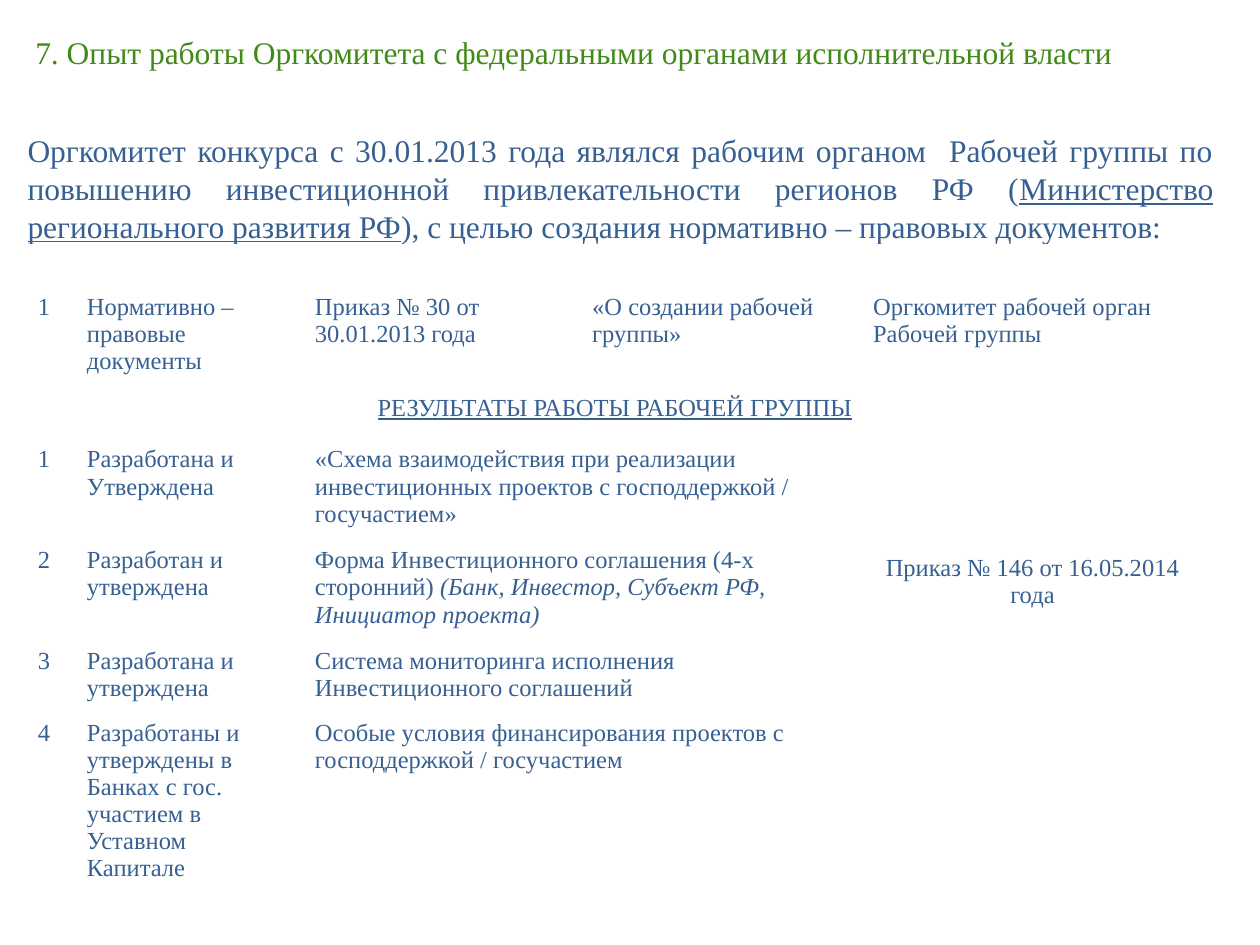
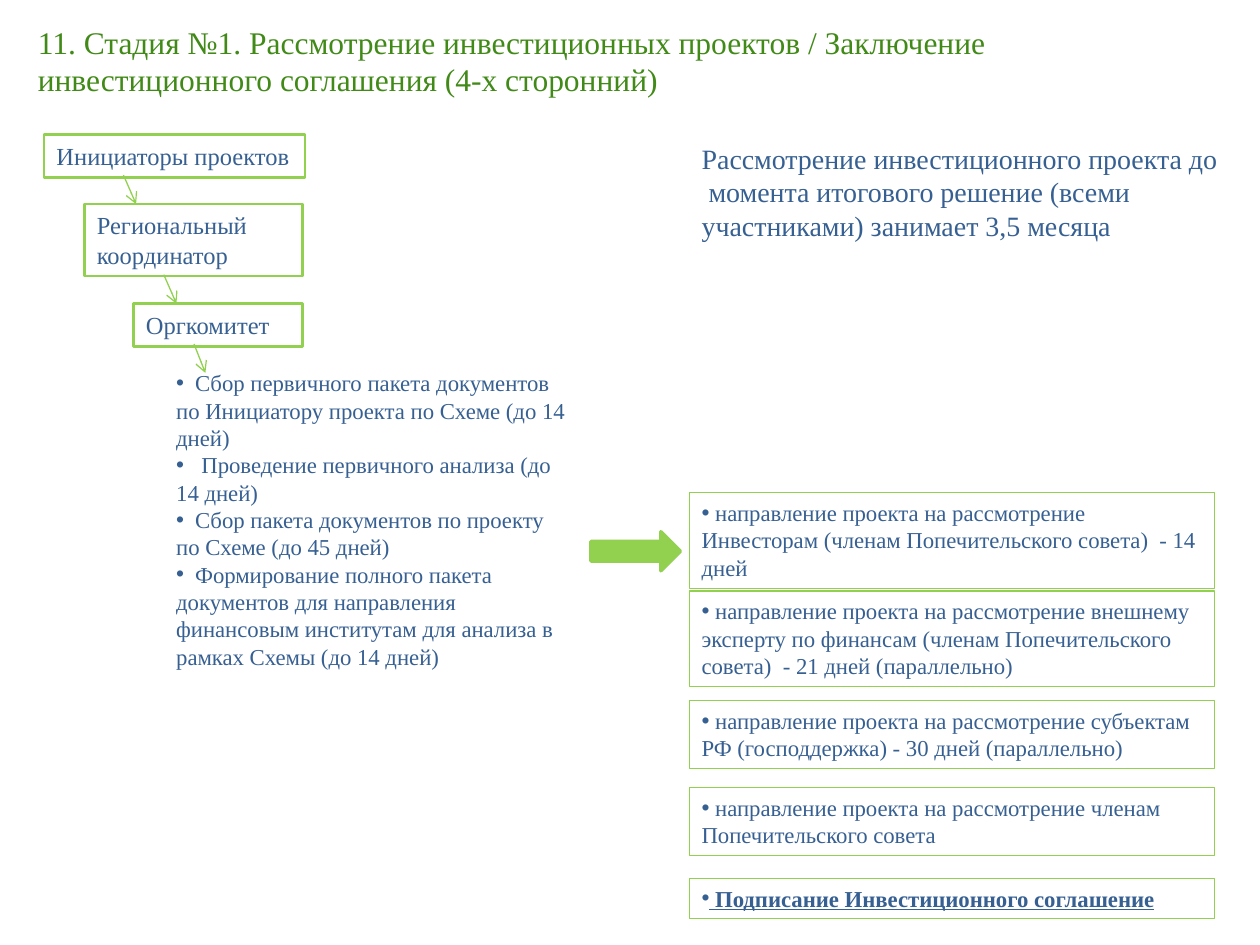
from dataclasses import dataclass

from lxml.etree import SubElement
from pptx import Presentation
from pptx.dml.color import RGBColor
from pptx.enum.shapes import MSO_CONNECTOR as Connector
from pptx.enum.shapes import MSO_SHAPE as Preset
from pptx.enum.text import MSO_ANCHOR as Anchor
from pptx.enum.text import MSO_AUTO_SIZE as AutoSize
from pptx.enum.text import PP_ALIGN as Align
from pptx.oxml.ns import qn
from pptx.util import Inches, Pt

FONT = "Times New Roman"
COLORS = {"title": "418A18", "text": "376092", "accent": "92D050"}
TITLE_ONLY = 5


@dataclass(frozen=True)
class Area:
    left: float
    top: float
    width: float
    height: float

    def inches(self) -> tuple:
        return tuple(map(Inches, (self.left, self.top, self.width, self.height)))


@dataclass(frozen=True)
class Run:
    text: str
    bold: bool = False
    italic: bool = False
    underline: bool = False


@dataclass(frozen=True)
class Paragraph:
    runs: tuple
    tab: float = 0  # gap between bullet and text, in inches


@dataclass(frozen=True)
class Box:
    area: Area
    paragraphs: tuple


@dataclass(frozen=True)
class Arrow:
    start: tuple
    end: tuple


def line(*texts, tab: float = 0) -> Paragraph:
    """A paragraph of plain strings and formatted runs."""
    return Paragraph(tuple(Run(t) if isinstance(t, str) else t for t in texts), tab)


def color(name: str) -> RGBColor:
    return RGBColor.from_string(COLORS[name])


# Shared drawing functions
def write(frame, paragraphs, *, size=14, ink="text", align=Align.LEFT, bullet=False) -> None:
    for index, content in enumerate(paragraphs):
        paragraph = frame.paragraphs[0] if index == 0 else frame.add_paragraph()
        paragraph.alignment = align
        properties = paragraph._p.get_or_add_pPr()
        if bullet:
            SubElement(properties, qn("a:buFont"), typeface="Arial")
            SubElement(properties, qn("a:buChar"), char="•")
        if content.tab:
            tabs = SubElement(properties, qn("a:tabLst"))
            SubElement(tabs, qn("a:tab"), pos=str(Inches(content.tab)), algn="l")
        for part in content.runs:
            run = paragraph.add_run()
            run.text = part.text
            font = run.font
            font.name, font.size, font.color.rgb = FONT, Pt(size), color(ink)
            font.bold, font.italic, font.underline = part.bold, part.italic, part.underline


def add_titled_slide(presentation, title: str, area: Area):
    slide = presentation.slides.add_slide(presentation.slide_layouts[TITLE_ONLY])
    shape = slide.shapes.title
    shape.left, shape.top, shape.width, shape.height = area.inches()
    frame = shape.text_frame
    frame.auto_size, frame.vertical_anchor = AutoSize.NONE, Anchor.TOP
    write(frame, [line(title)], size=18, ink="title")
    return slide


def add_text(slide, box: Box, **style) -> None:
    frame = slide.shapes.add_textbox(*box.area.inches()).text_frame
    frame.word_wrap = True
    write(frame, box.paragraphs, **style)


def add_outlined_shape(slide, preset, area: Area, line_width: float):
    shape = slide.shapes.add_shape(preset, *area.inches())
    shape.shadow.inherit = False
    shape.line.color.rgb, shape.line.width = color("accent"), Pt(line_width)
    return shape


def add_framed_text(slide, box: Box, line_width: float, **style) -> None:
    shape = add_outlined_shape(slide, Preset.RECTANGLE, box.area, line_width)
    shape.fill.background()
    shape.text_frame.word_wrap = True
    shape.text_frame.vertical_anchor = Anchor.TOP
    write(shape.text_frame, box.paragraphs, **style)


def add_arrow(slide, arrow: Arrow) -> None:
    connector = slide.shapes.add_connector(
        Connector.STRAIGHT, *map(Inches, arrow.start + arrow.end))
    connector.line.color.rgb, connector.line.width = color("accent"), Pt(0.75)
    SubElement(connector.line._get_or_add_ln(), qn("a:tailEnd"), type="arrow")
    SubElement(connector._element.spPr, qn("a:effectLst"))


# Slide with the documents table
INTRO = Box(Area(0.12, 0.99, 9.61, 1.01), (line(
    "Оргкомитет конкурса с 30.01.2013 года являлся рабочим органом  Рабочей группы "
    "по повышению инвестиционной привлекательности регионов РФ (",
    Run("Министерство регионального развития РФ", underline=True),
    "), с целью создания нормативно – правовых документов:"),))

COLUMN_WIDTHS = (0.39, 1.81, 2.2, 2.23, 2.73)
ROW_HEIGHTS = (0.34, 0.79, 0.41, 0.8, 0.8, 0.56, 1.51)
HEADING_ROW, FIRST_RESULT, LAST_MERGED_ROW = 2, 3, 5
DOCUMENT = ("1", "Нормативно – правовые документы", "Приказ № 30 от 30.01.2013 года",
            "«О создании рабочей группы»", "Оргкомитет рабочей орган Рабочей группы")
RESULTS = (
    ("1", "Разработана и Утверждена",
     "«Схема взаимодействия при реализации инвестиционных проектов с господдержкой / "
     "госучастием»"),
    ("2", "Разработан и утверждена", line(
        "Форма Инвестиционного соглашения (4-х сторонний) ",
        Run("(Банк, Инвестор, Субъект РФ, Инициатор проекта)", italic=True))),
    ("3", "Разработана и утверждена",
     "Система мониторинга исполнения Инвестиционного соглашений"),
    ("4", "Разработаны и утверждены в Банках с гос. участием в Уставном Капитале",
     "Особые условия финансирования проектов с господдержкой / госучастием"),
)


def add_documents_table(slide) -> None:
    area = Area(0.2, 1.94, sum(COLUMN_WIDTHS), sum(ROW_HEIGHTS))
    table = slide.shapes.add_table(
        len(ROW_HEIGHTS), len(COLUMN_WIDTHS), *area.inches()).table
    table.horz_banding = False
    for column, width in zip(table.columns, COLUMN_WIDTHS):
        column.width = Inches(width)
    for row, height in zip(table.rows, ROW_HEIGHTS):
        row.height = Inches(height)
    for cell in table.iter_cells():
        cell.fill.background()
    for cell in table.rows[0].cells:
        cell.margin_top = cell.margin_bottom = 0

    # Merged areas
    last = len(COLUMN_WIDTHS) - 1
    heading = table.cell(HEADING_ROW, 0)
    heading.merge(table.cell(HEADING_ROW, last))
    order = table.cell(FIRST_RESULT, last)
    order.merge(table.cell(LAST_MERGED_ROW, last))
    order.margin_top = Inches(0.91)
    for row in range(FIRST_RESULT, len(ROW_HEIGHTS)):
        table.cell(row, 2).merge(table.cell(row, 3))

    # Contents
    write(heading.text_frame,
          [line(Run("РЕЗУЛЬТАТЫ РАБОТЫ РАБОЧЕЙ ГРУППЫ", underline=True))],
          align=Align.CENTER)
    write(order.text_frame, [line("Приказ № 146 от 16.05.2014 года")], align=Align.CENTER)
    numbered = [(1, DOCUMENT), *enumerate(RESULTS, FIRST_RESULT)]
    for row, values in numbered:
        for column, value in enumerate(values):
            content = value if isinstance(value, Paragraph) else line(value)
            write(table.cell(row, column).text_frame, [content])


def build_documents_slide(presentation) -> None:
    slide = add_titled_slide(
        presentation,
        "7. Опыт работы Оргкомитета с федеральными органами исполнительной власти",
        Area(0.18, 0.21, 8.84, 0.41))
    add_text(slide, INTRO, size=18, align=Align.JUSTIFY)
    add_documents_table(slide)


# Slide with the review stage
PARTICIPANTS = (
    Box(Area(0.35, 1.07, 2.07, 0.34), (line("Инициаторы проектов"),)),
    Box(Area(0.67, 1.62, 1.73, 0.57), (line("Региональный"), line("координатор"))),
    Box(Area(1.06, 2.41, 1.34, 0.34), (line("Оргкомитет"),)),
)
ARROWS = (
    Arrow((0.98, 1.39), (1.08, 1.62)),
    Arrow((1.3, 2.18), (1.4, 2.41)),
    Arrow((1.54, 2.73), (1.63, 2.96)),
)
COMMITTEE_TASKS = Box(Area(1.3, 2.88, 3.31, 2.51), (
    line("\tСбор первичного пакета документов по Инициатору проекта по Схеме (до 14 дней)",
         tab=0.15),
    line("\tПроведение первичного анализа (до 14 дней)", tab=0.2),
    line("\tСбор пакета документов по проекту по Схеме (до 45 дней)", tab=0.15),
    line("\tФормирование полного пакета документов для направления финансовым институтам "
         "для анализа в рамках Схемы (до 14 дней)", tab=0.15),
))
DURATION = Box(Area(5.47, 1.07, 4.33, 0.91), (line(
    "Рассмотрение инвестиционного проекта до  момента итогового решение (всеми "
    "участниками) занимает 3,5 месяца"),))
REVIEWS = (
    (3.91, 0.76, " направление проекта на рассмотрение Инвесторам (членам Попечительского "
                 "совета)  - 14 дней"),
    (4.69, 0.76, " направление проекта на рассмотрение внешнему эксперту по финансам "
                 "(членам Попечительского совета)  - 21 дней (параллельно)"),
    (5.56, 0.54, " направление проекта на рассмотрение субъектам РФ (господдержка) - "
                 "30 дней (параллельно)"),
    (6.25, 0.54, " направление проекта на рассмотрение членам Попечительского совета"),
    (6.97, 0.32, Run(" Подписание Инвестиционного соглашение", bold=True, underline=True)),
)


def build_review_slide(presentation) -> None:
    slide = add_titled_slide(
        presentation,
        "11. Стадия №1. Рассмотрение инвестиционных проектов / Заключение "
        "инвестиционного соглашения (4-х сторонний)",
        Area(0.2, 0.13, 9.61, 0.71))
    for participant in PARTICIPANTS:
        add_framed_text(slide, participant, 1.5)
    for arrow in ARROWS:
        add_arrow(slide, arrow)
    add_text(slide, COMMITTEE_TASKS, size=13, bullet=True)
    block_arrow = add_outlined_shape(
        slide, Preset.RIGHT_ARROW, Area(4.69, 4.22, 0.71, 0.31), 2)
    block_arrow.fill.solid()
    block_arrow.fill.fore_color.rgb = color("accent")
    for top, height, text in REVIEWS:
        review = Box(Area(5.47, top, 4.17, height), (line(text),))
        add_framed_text(slide, review, 0.75, size=13, bullet=True)
    add_text(slide, DURATION, size=16)


def main() -> None:
    presentation = Presentation()
    presentation.slide_width, presentation.slide_height = Inches(10), Inches(7.5)
    build_documents_slide(presentation)
    build_review_slide(presentation)
    presentation.save("out.pptx")


if __name__ == "__main__":
    main()
